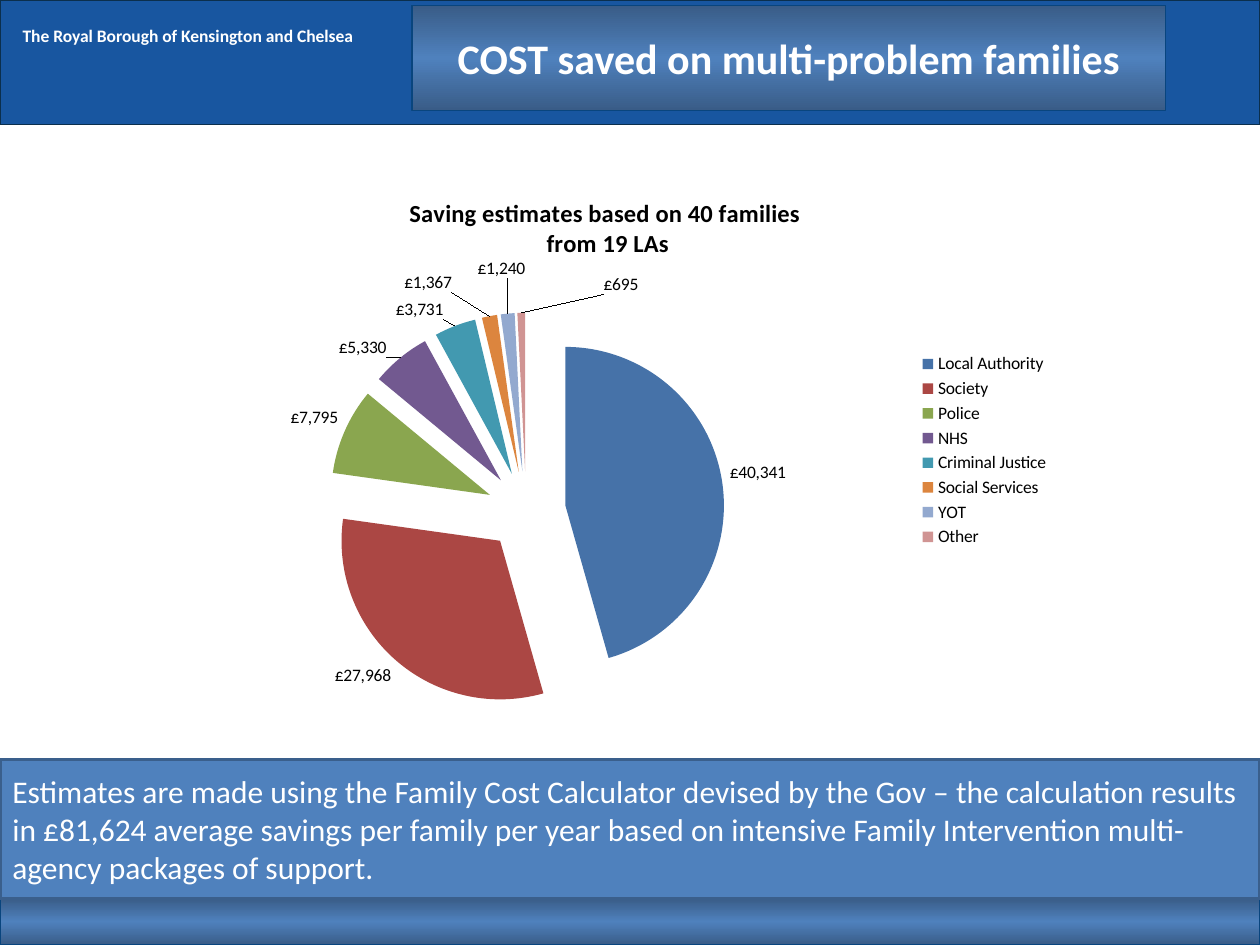
from copy import deepcopy

from pptx import Presentation
from pptx.chart.data import CategoryChartData
from pptx.dml.color import RGBColor
from pptx.enum.chart import XL_CHART_TYPE, XL_LABEL_POSITION, XL_LEGEND_POSITION
from pptx.enum.shapes import MSO_SHAPE
from pptx.enum.text import MSO_ANCHOR, MSO_AUTO_SIZE, PP_ALIGN
from pptx.oxml import parse_xml
from pptx.oxml.ns import nsdecls, qn
from pptx.util import Inches, Pt

RECTANGLE = MSO_SHAPE.RECTANGLE
PIE = XL_CHART_TYPE.PIE
OUTSIDE_END = XL_LABEL_POSITION.OUTSIDE_END
LEGEND_RIGHT = XL_LEGEND_POSITION.RIGHT
TOP, MIDDLE = MSO_ANCHOR.TOP, MSO_ANCHOR.MIDDLE
LEFT, CENTER = PP_ALIGN.LEFT, PP_ALIGN.CENTER

FONT = "Calibri"
POUND_FORMAT = '"£"#,##0;[Red]\\-"£"#,##0'
COLORS = {
    "white": "FFFFFF",
    "black": "000000",
    "header": "1856A0",
    "header_line": "0B2F4D",
    "band_edge": "395C87",
    "band_middle": "4F81BD",
    "band_line": "09457E",
    "note": "4F81BD",
    "note_line": "3A5F8C",
}
SAVINGS = [
    ("Local Authority", 40341, "4672A8"),
    ("Society", 27968, "AB4744"),
    ("Police", 7795, "8AA64F"),
    ("NHS", 5330, "725990"),
    ("Criminal Justice", 3731, "4299B0"),
    ("Social Services", 1367, "DC853E"),
    ("YOT", 1240, "93A9CF"),
    ("Other", 695, "D09493"),
]
LABEL_OFFSETS = {
    3: (-0.01, 0.01),
    4: (-0.01, 0),
    5: (-0.04, -0.03),
    6: (0.02, -0.05),
    7: (0.11, -0.02),
}


def rgb(name):
    return RGBColor.from_string(COLORS[name])


def set_line(shape, color, width):
    shape.line.color.rgb = rgb(color)
    shape.line.width = Pt(width)


def add_box(slide, left, top, width, height):
    shape = slide.shapes.add_shape(
        RECTANGLE, Inches(left), Inches(top), Inches(width), Inches(height))
    shape.shadow.inherit = False
    return shape


def fill_solid(shape, color):
    shape.fill.solid()
    shape.fill.fore_color.rgb = rgb(color)


def fill_band(shape):
    shape.fill.gradient()
    shape.fill.gradient_angle = 90
    stop_list = shape.element.spPr.find(".//" + qn("a:gsLst"))
    stop_list.insert(1, deepcopy(stop_list[0]))
    names = ("band_edge", "band_middle", "band_edge")
    for index, (stop, name) in enumerate(zip(shape.fill.gradient_stops, names)):
        stop.position = index / 2
        stop.color.rgb = rgb(name)
    set_line(shape, "band_line", 0.75)


def write_text(shape, text, size, bold=False, align=LEFT, anchor=MIDDLE):
    frame = shape.text_frame
    frame.text = text
    frame.word_wrap = True
    frame.vertical_anchor = anchor
    paragraph = frame.paragraphs[0]
    paragraph.alignment = align
    paragraph.font.name = FONT
    paragraph.font.size = Pt(size)
    paragraph.font.bold = bold
    paragraph.font.color.rgb = rgb("white")


def add_header(slide):
    header = add_box(slide, 0, 0, 10, 0.99)
    fill_solid(header, "header")
    set_line(header, "header_line", 0.75)
    write_text(header, "The Royal Borough of Kensington and Chelsea", 10,
               bold=True, anchor=TOP)
    header.text_frame.margin_left = Inches(0.18)
    header.text_frame.margin_top = Inches(0.2)
    slide.shapes.title.element.addprevious(header.element)


def format_title(slide):
    title = slide.shapes.title
    title.left, title.top = Inches(3.27), Inches(0.21)
    title.width, title.height = Inches(5.98), Inches(0.5)
    fill_band(title)
    write_text(title, "COST saved on multi-problem families", 24,
               bold=True, align=CENTER)
    title.text_frame.auto_size = MSO_AUTO_SIZE.SHAPE_TO_FIT_TEXT


def manual_layout(values, target=""):
    children = "".join(f'<c:{tag} val="{value}"/>' for tag, value in values.items())
    return parse_xml(
        f'<c:layout {nsdecls("c")}><c:manualLayout>{target}{children}'
        '</c:manualLayout></c:layout>')


def place_plot(chart):
    plot_area = chart.element.find(".//" + qn("c:plotArea"))
    for layout in plot_area.findall(qn("c:layout")):
        plot_area.remove(layout)
    values = {"xMode": "edge", "yMode": "edge",
              "x": 0.19, "y": 0.25, "w": 0.44, "h": 0.72}
    plot_area.insert(0, manual_layout(values, '<c:layoutTarget val="inner"/>'))


def format_slices(series):
    labels = series.data_labels
    labels.show_value = True
    labels.position = OUTSIDE_END
    labels.number_format = POUND_FORMAT
    labels.number_format_is_linked = False
    for index, (_, _, color) in enumerate(SAVINGS):
        fill = series.points[index].format.fill
        fill.solid()
        fill.fore_color.rgb = RGBColor.from_string(color)
    for index in LABEL_OFFSETS:
        series.points[index].data_label.position = OUTSIDE_END
    for label in labels._element.findall(qn("c:dLbl")):
        label_index = label.find(qn("c:idx"))
        x, y = LABEL_OFFSETS[int(label_index.get("val"))]
        label_index.addnext(manual_layout({"x": x, "y": y}))
    first_point = series._element.find(qn("c:dPt"))
    first_point.addprevious(
        parse_xml(f'<c:explosion {nsdecls("c")} val="25"/>'))


def add_savings_chart(slide):
    data = CategoryChartData(number_format=POUND_FORMAT)
    data.categories = [name for name, _, _ in SAVINGS]
    data.add_series("Series 1", [value for _, value, _ in SAVINGS])
    chart = slide.shapes.add_chart(
        PIE, Inches(1.22), Inches(1.39), Inches(7.21), Inches(4.37), data).chart
    chart.font.name = FONT
    chart.font.size = Pt(10)
    chart.font.color.rgb = rgb("black")
    chart.has_title = True
    title_frame = chart.chart_title.text_frame
    title_frame.text = "Saving estimates based on 40 families \nfrom 19 LAs"
    for paragraph in title_frame.paragraphs:
        paragraph.font.name = FONT
        paragraph.font.size = Pt(14)
        paragraph.font.bold = True
    chart.has_legend = True
    chart.legend.position = LEGEND_RIGHT
    chart.legend.include_in_layout = False
    chart.plots[0].vary_by_categories = True
    format_slices(chart.plots[0].series[0])
    place_plot(chart)


def add_note(slide):
    note = add_box(slide, 0, 6.03, 10, 1.1)
    fill_solid(note, "note")
    set_line(note, "note_line", 2)
    write_text(
        note,
        "Estimates are made using the Family Cost Calculator devised by the Gov – "
        "the calculation results in £81,624 average savings per family per year "
        "based on intensive Family Intervention multi-agency packages of support.",
        18)


def main():
    presentation = Presentation()
    presentation.slide_width = Inches(10)
    presentation.slide_height = Inches(7.5)
    slide = presentation.slides.add_slide(presentation.slide_layouts[5])
    add_header(slide)
    format_title(slide)
    fill_band(add_box(slide, 0, 7.13, 10, 0.37))
    add_savings_chart(slide)
    add_note(slide)
    presentation.save("out.pptx")


if __name__ == "__main__":
    main()
